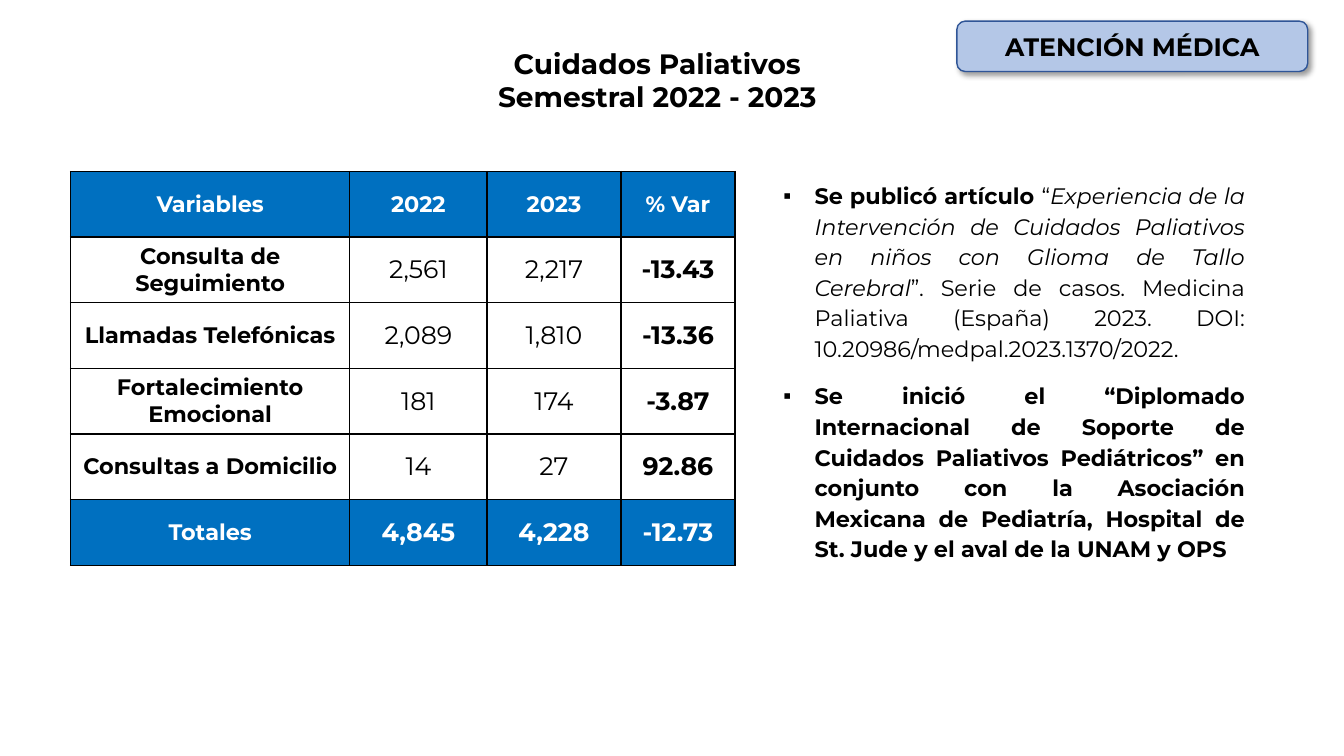
import dataclasses

import lxml.etree
import pptx
import pptx.dml.color
import pptx.enum.shapes
import pptx.enum.text
import pptx.oxml
import pptx.oxml.ns
import pptx.util

Inches = pptx.util.Inches
Pt = pptx.util.Pt
ALIGN = pptx.enum.text.PP_ALIGN
ANCHOR = pptx.enum.text.MSO_ANCHOR
NAMESPACE = pptx.oxml.ns.nsdecls("a")


@dataclasses.dataclass(frozen=True)
class Theme:
    """Font, colours and type sizes of the slide."""

    font: str = "Montserrat"
    ink: str = "000000"
    paper: str = "FFFFFF"
    band: str = "0070C0"
    badge: str = "B4C7E7"
    badge_line: str = "2F5597"
    title_size: int = 20
    figure_size: int = 18
    text_size: int = 16


THEME = Theme()

TITLE = ["Cuidados Paliativos", "Semestral 2022 - 2023"]
SECTION = "ATENCIÓN MÉDICA"
COLUMN_WIDTHS = [2.77, 1.36, 1.33, 1.13]
CARE_ROWS = [
    ["Variables", "2022", "2023", "% Var"],
    ["Consulta de Seguimiento", "2,561", "2,217", "-13.43"],
    ["Llamadas Telefónicas", "2,089", "1,810", "-13.36"],
    ["Fortalecimiento Emocional", "181", "174", "-3.87"],
    ["Consultas a Domicilio", "14", "27", "92.86"],
    ["Totales", "4,845", "4,228", "-12.73"],
]
ACHIEVEMENTS = [
    [
        ("Se publicó artículo ", True, False),
        ("“", False, False),
        ("Experiencia de la Intervención de Cuidados Paliativos en niños "
         "con Glioma de Tallo Cerebral", False, True),
        ("”. Serie de casos. Medicina Paliativa (España) 2023. "
         "DOI: 10.20986/medpal.2023.1370/2022.", False, False),
    ],
    [
        ("Se inició el “Diplomado Internacional de Soporte de Cuidados "
         "Paliativos Pediátricos” en conjunto con la Asociación Mexicana de "
         "Pediatría, Hospital de St. Jude y el aval de la UNAM y OPS", True, False),
    ],
]


def rgb(code):
    """Return the colour for a hexadecimal code."""
    return pptx.dml.color.RGBColor.from_string(code)


def add_run(paragraph, text, size, color=THEME.ink, bold=True, italic=False):
    """Append one formatted run to a paragraph."""
    run = paragraph.add_run()
    run.text = text
    run.font.name = THEME.font
    run.font.size = Pt(size)
    run.font.color.rgb = rgb(color)
    run.font.bold = bold
    run.font.italic = italic


def place(shape, box):
    """Move a shape to a box of left, top, width and height in inches."""
    shape.left, shape.top, shape.width, shape.height = map(Inches, box)


def paragraphs_for(frame, items):
    """Yield a paragraph of the frame along with each item."""
    for index, item in enumerate(items):
        yield (frame.add_paragraph() if index else frame.paragraphs[0]), item


def fill_title(title, box):
    """Place the centred two-line title."""
    place(title, box)
    frame = title.text_frame
    frame.auto_size = pptx.enum.text.MSO_AUTO_SIZE.NONE
    frame.vertical_anchor = ANCHOR.TOP
    for paragraph, line in paragraphs_for(frame, TITLE):
        paragraph.alignment = ALIGN.CENTER
        add_run(paragraph, line, THEME.title_size)


def border_cell(cell):
    """Draw a thin line on all four sides of a cell."""
    properties = cell._tc.get_or_add_tcPr()
    for side in "LRTB":
        properties.append(pptx.oxml.parse_xml(
            f'<a:ln{side} {NAMESPACE} w="{Pt(1)}"><a:solidFill>'
            f'<a:srgbClr val="{THEME.ink}"/></a:solidFill></a:ln{side}>'))


def fill_cell(cell, text, banded, size, bold):
    """Format one table cell and write its text."""
    border_cell(cell)
    if banded:
        cell.fill.solid()
        cell.fill.fore_color.rgb = rgb(THEME.band)
    else:
        cell.fill.background()
    cell.margin_left = cell.margin_right = Inches(0.07)
    cell.margin_top = cell.margin_bottom = 0
    cell.vertical_anchor = ANCHOR.MIDDLE
    paragraph = cell.text_frame.paragraphs[0]
    paragraph.alignment = ALIGN.CENTER
    add_run(paragraph, text, size, THEME.paper if banded else THEME.ink, bold)


def add_care_table(slide, box):
    """Add the table of care activities with its header and totals."""
    table = slide.shapes.add_table(
        len(CARE_ROWS), len(COLUMN_WIDTHS), *map(Inches, box)).table
    table.horz_banding = False
    for column, width in zip(table.columns, COLUMN_WIDTHS):
        column.width = Inches(width)
    last_row, last_column = len(CARE_ROWS) - 1, len(COLUMN_WIDTHS) - 1
    for r, row in enumerate(CARE_ROWS):
        banded = r in (0, last_row)
        for c, text in enumerate(row):
            size = THEME.text_size if r == 0 or c == 0 else THEME.figure_size
            bold = banded or c in (0, last_column)
            fill_cell(table.cell(r, c), text, banded, size, bold)


def add_bullet(paragraph, indent):
    """Give a paragraph a square bullet with a hanging indent."""
    properties = paragraph._p.get_or_add_pPr()
    properties.set("marL", str(Inches(indent)))
    properties.set("indent", str(-Inches(indent)))
    properties.append(pptx.oxml.parse_xml(f'<a:buFont {NAMESPACE} typeface="Arial"/>'))
    properties.append(pptx.oxml.parse_xml(f'<a:buChar {NAMESPACE} char="▪"/>'))


def fill_achievements(body, box):
    """Place the justified list of achievements."""
    place(body, box)
    frame = body.text_frame
    frame.auto_size = pptx.enum.text.MSO_AUTO_SIZE.NONE
    frame.vertical_anchor = ANCHOR.TOP
    for paragraph, parts in paragraphs_for(frame, ACHIEVEMENTS):
        add_bullet(paragraph, 0.31)
        paragraph.alignment = ALIGN.JUSTIFY
        paragraph.line_spacing = 1.14
        paragraph.space_before = Pt(0)
        paragraph.space_after = Pt(12)
        for text, bold, italic in parts:
            add_run(paragraph, text, THEME.text_size, bold=bold, italic=italic)


def add_section_badge(slide, box):
    """Add the rounded section label with its soft shadow."""
    badge = slide.shapes.add_shape(
        pptx.enum.shapes.MSO_SHAPE.ROUNDED_RECTANGLE, *map(Inches, box))
    badge.fill.solid()
    badge.fill.fore_color.rgb = rgb(THEME.badge)
    badge.line.color.rgb = rgb(THEME.badge_line)
    badge.line.width = Pt(1)
    badge.shadow.inherit = False
    effects = badge._element.spPr.find(pptx.oxml.ns.qn("a:effectLst"))
    effects.append(lxml.etree.fromstring(
        f'<a:outerShdw {NAMESPACE} blurRad="{Pt(4)}" dist="{Pt(3)}" dir="2700000" '
        f'algn="tl" rotWithShape="0"><a:srgbClr val="{THEME.ink}">'
        '<a:alpha val="40000"/></a:srgbClr></a:outerShdw>'))
    badge.text_frame.vertical_anchor = ANCHOR.MIDDLE
    paragraph = badge.text_frame.paragraphs[0]
    paragraph.alignment = ALIGN.CENTER
    add_run(paragraph, SECTION, THEME.figure_size)


def main():
    """Build the palliative care slide and save it."""
    deck = pptx.Presentation()
    deck.slide_width, deck.slide_height = Inches(13.33), Inches(7.5)
    slide = deck.slides.add_slide(deck.slide_layouts[1])
    fill_title(slide.shapes.title, (3.59, 0.41, 5.86, 0.86))
    add_care_table(slide, (0.7, 1.7, 6.59, 3.91))
    fill_achievements(slide.placeholders[1], (7.67, 1.72, 4.78, 3.93))
    add_section_badge(slide, (9.49, 0.21, 3.48, 0.5))
    deck.save("out.pptx")


if __name__ == "__main__":
    main()
